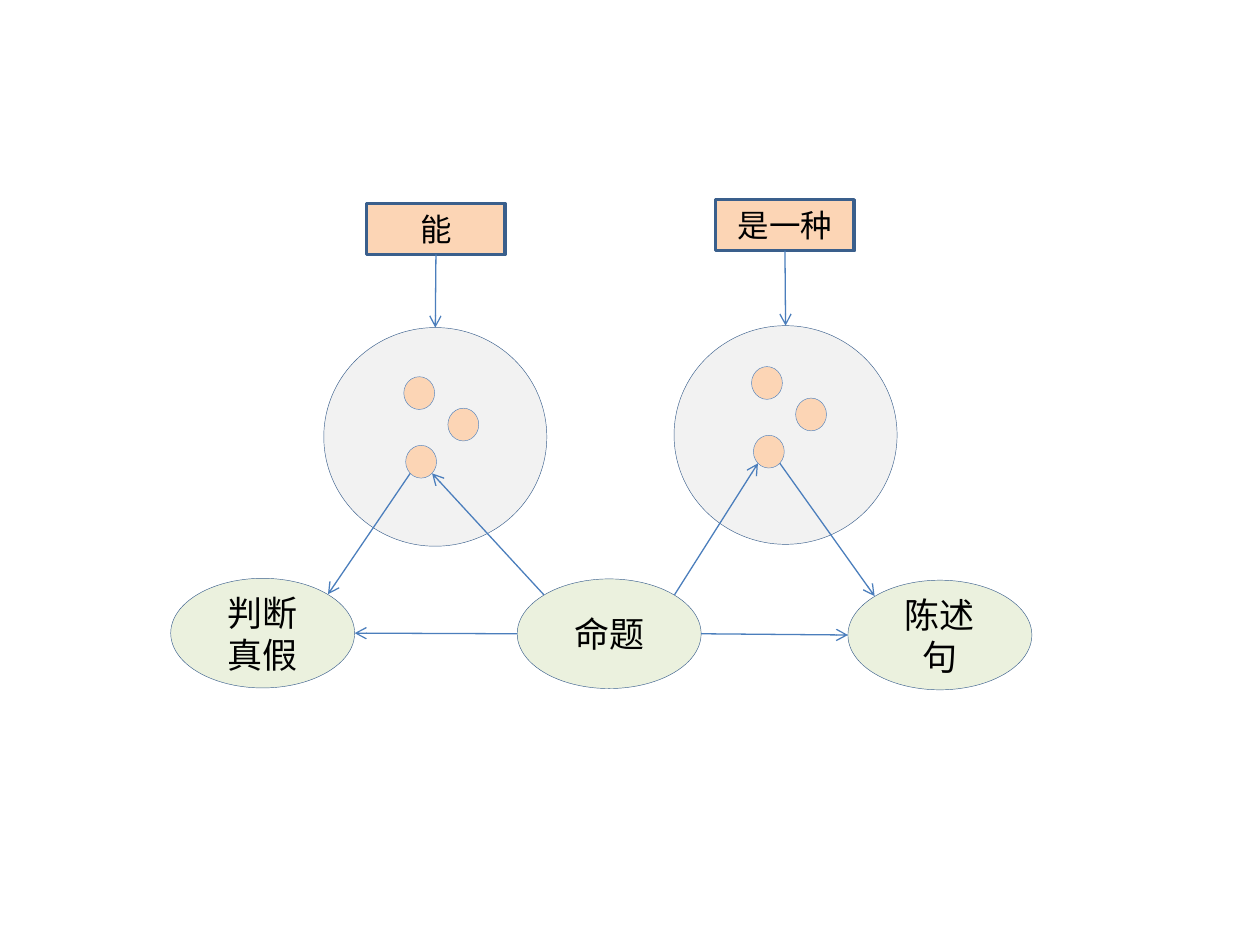
from lxml import etree
from pptx import Presentation
from pptx import util as u
from pptx.dml.color import RGBColor
from pptx.enum import shapes, text
from pptx.oxml.ns import qn

# Grid of the slide: 100 columns by 75 rows
COLUMNS, ROWS = 100, 75
CORNER = 0.71  # a diagonal point on an ellipse, as a share of its radius

TOP, BOTTOM, LEFT, RIGHT = (0, -1), (0, 1), (-1, 0), (1, 0)
TOP_LEFT, TOP_RIGHT = (-CORNER, -CORNER), (CORNER, -CORNER)
BOTTOM_LEFT, BOTTOM_RIGHT = (-CORNER, CORNER), (CORNER, CORNER)


def colour(value):
    return RGBColor.from_string(value)


class ConceptMap:
    font = "Calibri"
    ink, outline, arrow_line, dot_line = "000000", "3A5F8C", "4B7EBC", "4F81BD"
    peach, green, grey = "FCD5B5", "EBF1DE", "F2F2F2"

    def __init__(self, deck):
        self.page = deck.slides.add_slide(deck.slide_layouts[6])
        self.column = deck.slide_width / COLUMNS
        self.row = deck.slide_height / ROWS

    def shape(self, kind, left, top, width, height, fill, line, weight):
        box = self.page.shapes.add_shape(
            kind, round(left * self.column), round(top * self.row),
            round(width * self.column), round(height * self.row))
        box.shadow.inherit = False
        box.fill.solid()
        box.fill.fore_color.rgb = colour(fill)
        box.line.color.rgb = colour(line)
        box.line.width = u.Pt(weight)
        return box

    def label(self, box, words, size):
        frame = box.text_frame
        frame.text = words
        frame.word_wrap = True
        frame.margin_left = frame.margin_right = round(1.2 * self.column)
        frame.vertical_anchor = text.MSO_ANCHOR.MIDDLE
        para = frame.paragraphs[0]
        para.alignment = text.PP_ALIGN.CENTER
        for span in para.runs:
            span.font.name = self.font
            span.font.size = u.Pt(size)
            span.font.color.rgb = colour(self.ink)

    def relation(self, words, left, top):
        box = self.shape(shapes.MSO_SHAPE.RECTANGLE, left, top, 11, 4.05,
                         self.peach, self.outline, 2)
        self.label(box, words, 18)
        return box

    def concept(self, words, left, top):
        box = self.shape(shapes.MSO_SHAPE.OVAL, left, top, 14.6, 8.7,
                         self.green, self.outline, 0.25)
        self.label(box, words, 20)
        return box

    def circle(self, left, top):
        return self.shape(shapes.MSO_SHAPE.OVAL, left, top, 17.7, 17.35,
                          self.grey, self.outline, 0.25)

    def dots(self, left, top):
        """Draw three dots and return the lowest one."""
        for right, down in ((0, 0), (3.5, 2.5), (0.15, 5.45)):
            dot = self.shape(shapes.MSO_SHAPE.OVAL, left + right, top + down,
                             2.45, 2.6, self.peach, self.dot_line, 0.25)
        return dot

    def point(self, box, side):
        return (round(box.left + box.width * (1 + side[0]) / 2),
                round(box.top + box.height * (1 + side[1]) / 2))

    def arrow(self, start, start_side, end, end_side):
        link = self.page.shapes.add_connector(
            shapes.MSO_CONNECTOR.STRAIGHT,
            *self.point(start, start_side), *self.point(end, end_side))
        link.line.color.rgb = colour(self.arrow_line)
        link.line.width = u.Pt(0.75)
        properties = link.element.spPr
        etree.SubElement(properties.find(qn("a:ln")), qn("a:tailEnd"), type="arrow")
        etree.SubElement(properties, qn("a:effectLst"))


def main():
    deck = Presentation()
    deck.slide_width, deck.slide_height = u.Inches(10), u.Inches(7.5)
    chart = ConceptMap(deck)

    # Relation boxes, each pointing to a circle of instances
    instances = []
    for words, box_at, circle_at, dots_at in (
            ("能", (29.1, 16.15), (25.7, 26), (32.05, 29.9)),
            ("是一种", (56.8, 15.85), (53.5, 25.85), (59.65, 29.1))):
        circle = chart.circle(*circle_at)
        instances.append(chart.dots(*dots_at))
        chart.arrow(chart.relation(words, *box_at), BOTTOM, circle, TOP)
    can, is_a = instances

    # Concepts along the bottom
    judgement = chart.concept("判断真假", 13.55, 45.9)
    proposition = chart.concept("命题", 41.05, 45.95)
    statement = chart.concept("陈述句", 67.3, 46.05)

    # Links from the proposition, direct and through an instance
    for link in (
            (proposition, LEFT, judgement, RIGHT),
            (proposition, TOP_LEFT, can, BOTTOM_RIGHT),
            (can, BOTTOM_LEFT, judgement, TOP_RIGHT),
            (proposition, RIGHT, statement, LEFT),
            (proposition, TOP_RIGHT, is_a, BOTTOM_LEFT),
            (is_a, BOTTOM_RIGHT, statement, TOP_LEFT)):
        chart.arrow(*link)

    deck.save("out.pptx")


if __name__ == "__main__":
    main()
